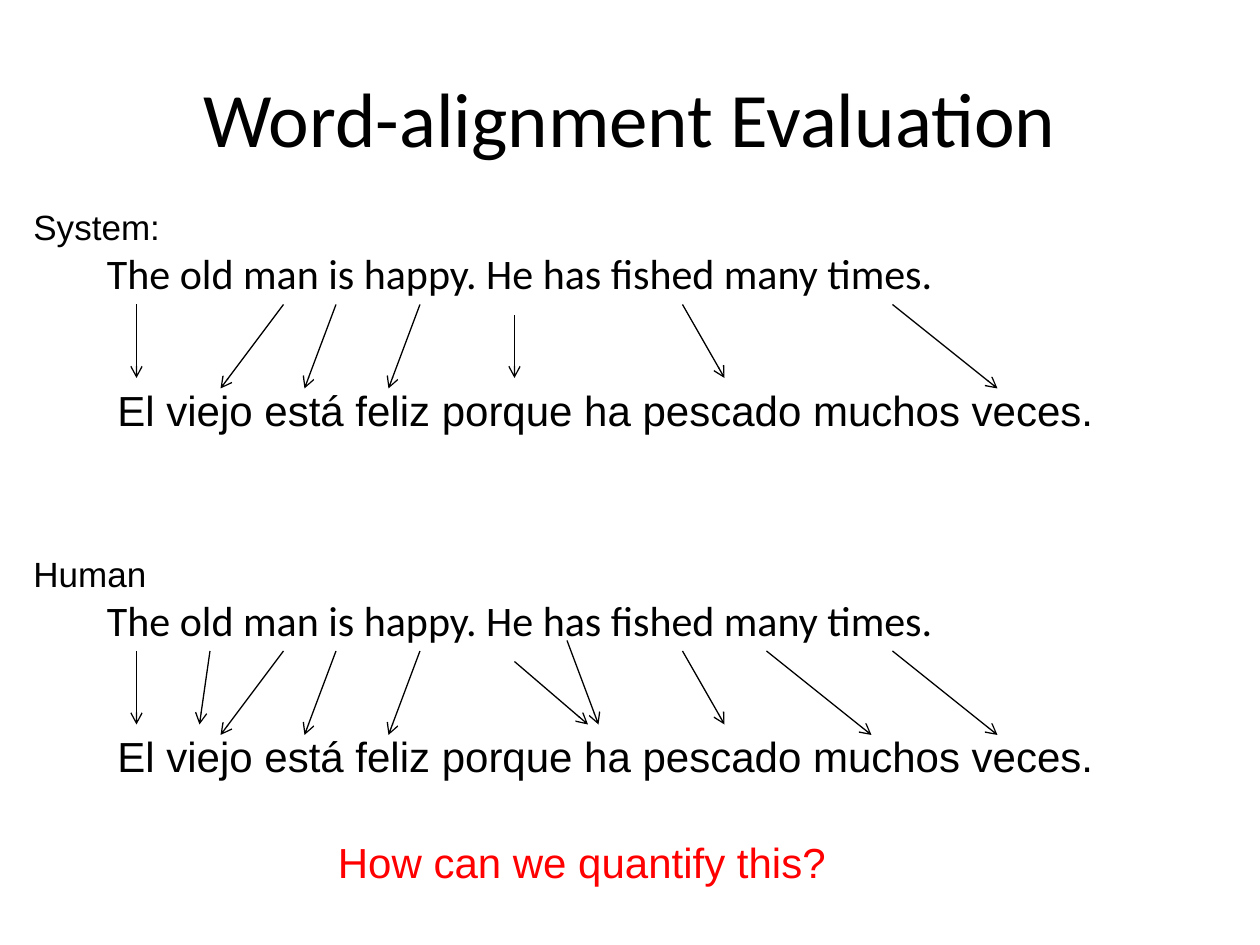
from lxml import etree
from pptx import Presentation
from pptx import util as u
from pptx.dml.color import RGBColor
from pptx.enum import shapes, text
from pptx.oxml.ns import qn

BLACK = RGBColor(0, 0, 0)
RED = RGBColor(255, 0, 0)

TITLE = "Word-alignment Evaluation"
QUESTION = "How can we quantify this?"
ENGLISH = "The old man is happy. He has fished many times."
SPANISH = "El viejo está feliz porque ha pescado muchos veces."

# Arrows in grid units: (x, y) at the English word, (x, y) at the Spanish
# word, with y counted from the top of the alignment block.
SHARED = [
    ((13, 10), (13, 17)),
    ((27, 10), (21, 18)),
    ((32, 10), (29, 18)),
    ((40, 10), (37, 18)),
    ((65, 10), (69, 17)),
    ((85, 10), (95, 18)),
]
SYSTEM_ONLY = [((49, 11), (49, 17))]
HUMAN_ONLY = [
    ((20, 10), (19, 17)),
    ((49, 11), (56, 17)),
    ((54, 9), (57, 17)),
    ((73, 10), (83, 18)),
]
# label, label width, top row, arrows
ALIGNMENTS = [
    ("System:", 14.7, 19, SHARED + SYSTEM_ONLY),
    ("Human", 13.3, 52, SHARED + HUMAN_ONLY),
]


def grid(n):
    """Length of n grid units, twelve to the inch."""
    return u.Inches(n / 12)


def add_text(slide, words, box, size=24, font="Arial", color=BLACK, wrap=True,
             align=text.PP_ALIGN.LEFT, anchor=text.MSO_ANCHOR.TOP):
    tf = slide.shapes.add_textbox(*map(grid, box)).text_frame
    tf.word_wrap = wrap
    tf.vertical_anchor = anchor
    if not wrap:
        tf.auto_size = text.MSO_AUTO_SIZE.SHAPE_TO_FIT_TEXT
    p = tf.paragraphs[0]
    p.alignment = align
    r = p.add_run()
    r.text = words
    r.font.size = u.Pt(size)
    r.font.name = font
    r.font.color.rgb = color


def add_arrow(slide, start, end):
    line = slide.shapes.add_connector(
        shapes.MSO_CONNECTOR.STRAIGHT, *map(grid, start + end))
    line.line.color.rgb = BLACK
    line.line.width = u.Pt(0.75)
    sp_pr = line.element.spPr
    etree.SubElement(sp_pr.find(qn("a:ln")), qn("a:tailEnd"), type="arrow")
    etree.SubElement(sp_pr, qn("a:effectLst"))


def add_alignment(slide, label, label_width, top, arrows):
    add_text(slide, label, (2, top, label_width, 5.3), size=20, wrap=False)
    add_text(slide, ENGLISH, (9, top + 4, 105, 10), font="Calibri")
    add_text(slide, SPANISH, (10, top + 17, 100, 7))
    for (x1, y1), (x2, y2) in arrows:
        add_arrow(slide, (x1, top + y1), (x2, top + y2))


def main():
    prs = Presentation()
    prs.slide_width, prs.slide_height = u.Inches(10), u.Inches(7.5)
    slide = prs.slides.add_slide(prs.slide_layouts[6])
    add_text(slide, TITLE, (6, 3.6, 108, 15), size=44, font="Calibri",
             align=text.PP_ALIGN.CENTER, anchor=text.MSO_ANCHOR.MIDDLE)
    for alignment in ALIGNMENTS:
        add_alignment(slide, *alignment)
    add_text(slide, QUESTION, (31, 79.1, 49.4, 6), color=RED, wrap=False)
    prs.save("out.pptx")


if __name__ == "__main__":
    main()
